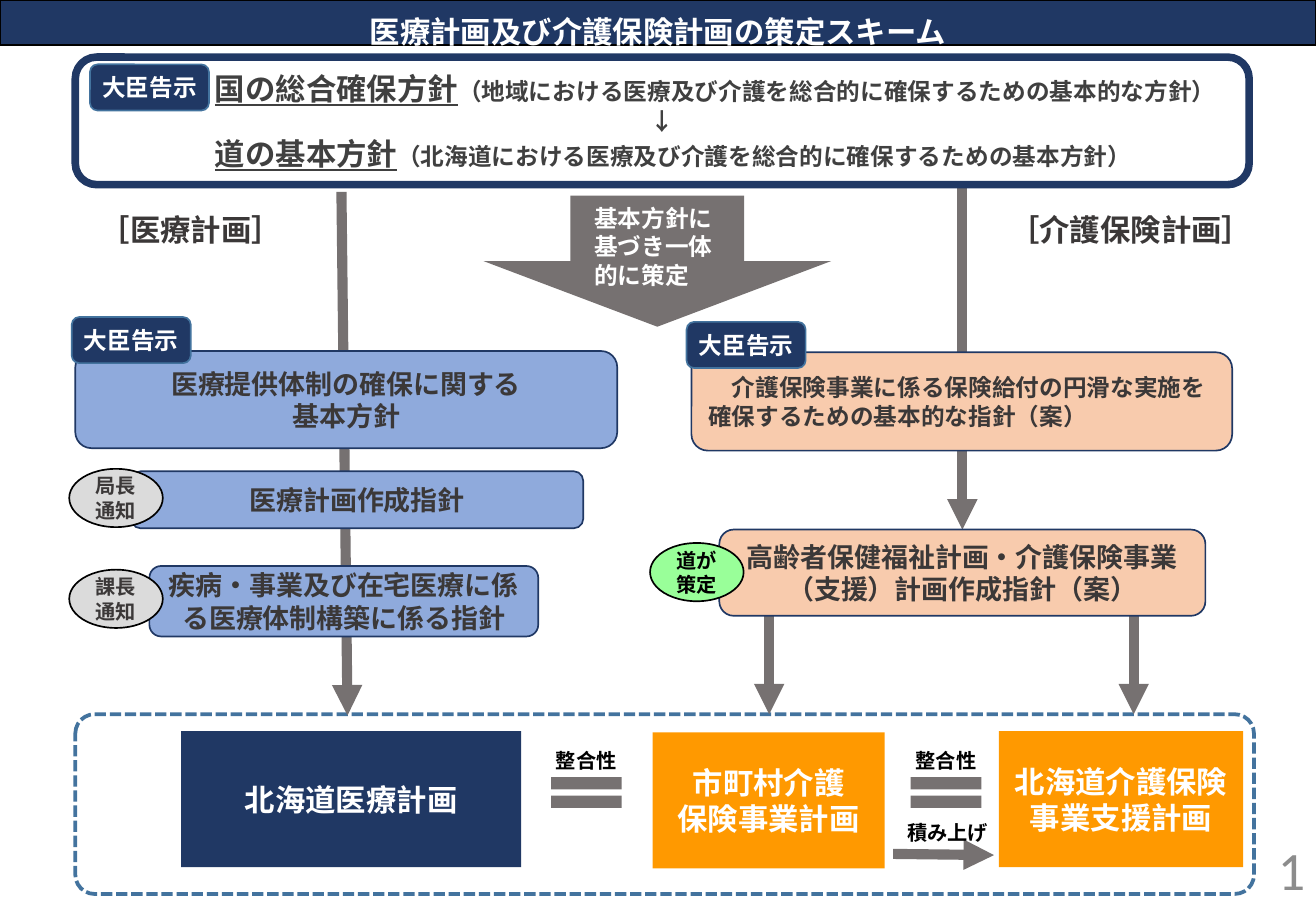
from dataclasses import dataclass

from lxml.etree import SubElement
from pptx import Presentation
from pptx.dml.color import RGBColor
from pptx.enum.dml import MSO_LINE
from pptx.enum.shapes import MSO_CONNECTOR, MSO_SHAPE
from pptx.enum.text import MSO_ANCHOR, PP_ALIGN
from pptx.oxml.ns import qn
from pptx.util import Emu, Pt

EMU_PER_PX = 9144  # 100 px to the inch


@dataclass(frozen=True)
class Theme:
    font: str = "Noto Sans CJK JP"
    number_font: str = "Calibri"
    navy: str = "203864"
    steel: str = "43739E"
    blue: str = "8FAADC"
    peach: str = "F8CBAD"
    orange: str = "FF9900"
    silver: str = "DBDBDB"
    green: str = "99FF99"
    gray: str = "767171"
    ink: str = "3B3838"
    policy_ink: str = "404040"
    page_ink: str = "8C8C8C"
    black: str = "000000"
    white: str = "FFFFFF"
    page: int = 32
    title: int = 18
    box: int = 16
    body: int = 14
    note: int = 12


THEME = Theme()


def px(value):
    return Emu(value * EMU_PER_PX)


def write(frame, text, size, color, font=THEME.font, bold=True, align=PP_ALIGN.CENTER,
          anchor=MSO_ANCHOR.MIDDLE, inset=(10, 5), spacing=None, first_indent=0):
    """Text is a string with one paragraph a line, or a list of
    (runs, align, left margin), each run being (text, size, underline)."""
    frame.word_wrap = True
    frame.vertical_anchor = anchor
    frame.margin_left = frame.margin_right = px(inset[0])
    frame.margin_top = frame.margin_bottom = px(inset[1])
    if isinstance(text, str):
        text = [([(line, size, False)], align, 0) for line in text.split("\n")]
    for index, (runs, alignment, margin) in enumerate(text):
        paragraph = frame.add_paragraph() if index else frame.paragraphs[0]
        paragraph.alignment = alignment
        if spacing:
            paragraph.line_spacing = spacing
        properties = paragraph._p.get_or_add_pPr()
        properties.set("marL", str(px(margin)))
        properties.set("indent", str(Pt(first_indent)))
        for words, run_size, underline in runs:
            run = paragraph.add_run()
            run.text = words
            run.font.size = Pt(run_size)
            run.font.bold = bold
            run.font.underline = underline
            run.font.color.rgb = RGBColor.from_string(color)
            run.font.name = font
            SubElement(run.font._element, qn("a:ea")).set("typeface", THEME.font)


class Scheme:
    def __init__(self, slide, theme):
        self.slide = slide
        self.theme = theme

    def shape(self, kind, at, fill=None, line=None, width=1, dash=None, radius=None):
        shape = self.slide.shapes.add_shape(kind, *map(px, at))
        shape.shadow.inherit = False
        if radius is not None:
            shape.adjustments[0] = radius
        if fill:
            shape.fill.solid()
            shape.fill.fore_color.rgb = RGBColor.from_string(fill)
        else:
            shape.fill.background()
        if line:
            shape.line.color.rgb = RGBColor.from_string(line)
            shape.line.width = Pt(width)
            shape.line.dash_style = dash
        else:
            shape.line.fill.background()
        return shape

    def label(self, at, text, size, color, **form):
        box = self.slide.shapes.add_textbox(*map(px, at))
        write(box.text_frame, text, size, color, **form)

    def guideline(self, at, text, fill, size=THEME.box, **form):
        box = self.shape(MSO_SHAPE.ROUNDED_RECTANGLE, at, fill, self.theme.navy)
        write(box.text_frame, text, size, self.theme.ink, **form)

    def plan(self, at, text, fill):
        box = self.shape(MSO_SHAPE.RECTANGLE, at, fill)
        write(box.text_frame, text, self.theme.title, self.theme.white)

    def notice(self, left, top):
        badge = self.shape(MSO_SHAPE.ROUNDED_RECTANGLE, (left, top, 98, 38),
                           self.theme.navy, self.theme.steel)
        write(badge.text_frame, "大臣告示", self.theme.body, self.theme.white, inset=(0, 5))

    def issuer(self, left, top, text, fill, color):
        oval = self.shape(MSO_SHAPE.OVAL, (left, top, 77, 48), fill, self.theme.black)
        write(oval.text_frame, text, self.theme.note, color, inset=(0, 0))

    def consistency(self, left):
        self.shape(MSO_SHAPE.MATH_EQUAL, (left, 631, 79, 43), self.theme.gray)
        self.label((left, 612, 79, 28), "整合性", self.theme.note, self.theme.black)

    def arrow(self, start, end):
        arrow = self.slide.shapes.add_connector(MSO_CONNECTOR.STRAIGHT, *map(px, start + end))
        arrow.line.color.rgb = RGBColor.from_string(self.theme.gray)
        arrow.line.width = Pt(6)
        SubElement(arrow.line._get_or_add_ln(), qn("a:tailEnd")).set("type", "triangle")
        SubElement(arrow._element.spPr, qn("a:effectLst"))


def main():
    deck = Presentation()
    deck.slide_width, deck.slide_height = px(1083), px(750)
    theme = THEME
    scheme = Scheme(deck.slides.add_slide(deck.slide_layouts[6]), theme)

    # Frame around the plans and the arrows running behind the boxes
    scheme.shape(MSO_SHAPE.ROUNDED_RECTANGLE, (62, 588, 970, 148), line=theme.steel,
                 width=2.25, dash=MSO_LINE.SQUARE_DOT, radius=0.107)
    for start, end in (((792, 155), (792, 436)), ((281, 158), (286, 589)),
                       ((933, 507), (933, 588)), ((633, 507), (633, 588)),
                       ((735, 703), (818, 704))):
        scheme.arrow(start, end)

    # Title bar
    title = scheme.shape(MSO_SHAPE.RECTANGLE, (0, 0, 1083, 37), theme.navy, theme.black)
    write(title.text_frame, "医療計画及び介護保険計画の策定スキーム", theme.title, theme.white,
          inset=(10, 4), spacing=1.5)

    # National and prefectural policies
    policies = scheme.shape(MSO_SHAPE.ROUNDED_RECTANGLE, (62, 47, 966, 105),
                            line=theme.navy, width=4.5)
    national = [("国の総合確保方針", theme.title, True),
                ("（地域における医療及び介護を総合的に確保するための基本的な方針）", theme.body, False)]
    prefectural = [("道の基本方針", theme.title, True),
                   ("（北海道における医療及び介護を総合的に確保するための基本方針）", theme.body, False)]
    write(policies.text_frame,
          [(national, PP_ALIGN.LEFT, 100),
           ([("↓", theme.body, False)], PP_ALIGN.CENTER, 0),
           (prefectural, PP_ALIGN.LEFT, 100)],
          theme.title, theme.policy_ink)

    # Joint drafting arrow and the two headings
    scheme.shape(MSO_SHAPE.DOWN_ARROW, (398, 161, 286, 108), theme.gray)
    scheme.label((479, 163, 129, 81), "基本方針に\n基づき一体的に策定", theme.body, theme.white,
                 align=PP_ALIGN.LEFT, anchor=MSO_ANCHOR.TOP)
    for at, heading in (((48, 169, 218, 45), "［医療計画］"),
                        ((813, 169, 235, 45), "［介護保険計画］")):
        scheme.label(at, heading, theme.title, theme.ink, anchor=MSO_ANCHOR.TOP)

    # Medical guidelines
    scheme.guideline((62, 289, 446, 80), "医療提供体制の確保に関する\n基本方針", theme.blue)
    scheme.guideline((108, 388, 372, 47), "医療計画作成指針", theme.blue)
    scheme.guideline((123, 466, 320, 58),
                     "疾病・事業及び在宅医療に係る医療体制構築に係る指針", theme.blue)

    # Long-term care guidelines
    scheme.guideline((569, 290, 445, 81),
                     "介護保険事業に係る保険給付の円滑な実施を確保するための基本的な指針（案）",
                     theme.peach, size=theme.body, align=PP_ALIGN.LEFT, first_indent=theme.body)
    scheme.guideline((592, 436, 400, 71),
                     "高齢者保健福祉計画・介護保険事業（支援）計画作成指針（案）", theme.peach)

    # Who issues each guideline
    for left, top in ((74, 53), (59, 261), (565, 265)):
        scheme.notice(left, top)
    scheme.issuer(57, 386, "局長\n通知", theme.silver, theme.ink)
    scheme.issuer(57, 469, "課長\n通知", theme.silver, theme.ink)
    scheme.issuer(535, 447, "道が\n策定", theme.green, theme.black)

    # Resulting plans and their relations
    scheme.plan((149, 602, 280, 112), "北海道医療計画", theme.navy)
    scheme.plan((537, 603, 191, 112), "市町村介護\n保険事業計画", theme.orange)
    scheme.plan((822, 602, 201, 112), "北海道介護保険事業支援計画", theme.orange)
    for left in (443, 739):
        scheme.consistency(left)
    scheme.label((728, 672, 104, 26), "積み上げ", theme.note, theme.black, inset=(0, 5))

    # Page number
    scheme.label((840, 695, 244, 40), "1", theme.page, theme.page_ink,
                 font=theme.number_font, bold=False, align=PP_ALIGN.RIGHT)

    deck.save("out.pptx")


if __name__ == "__main__":
    main()
